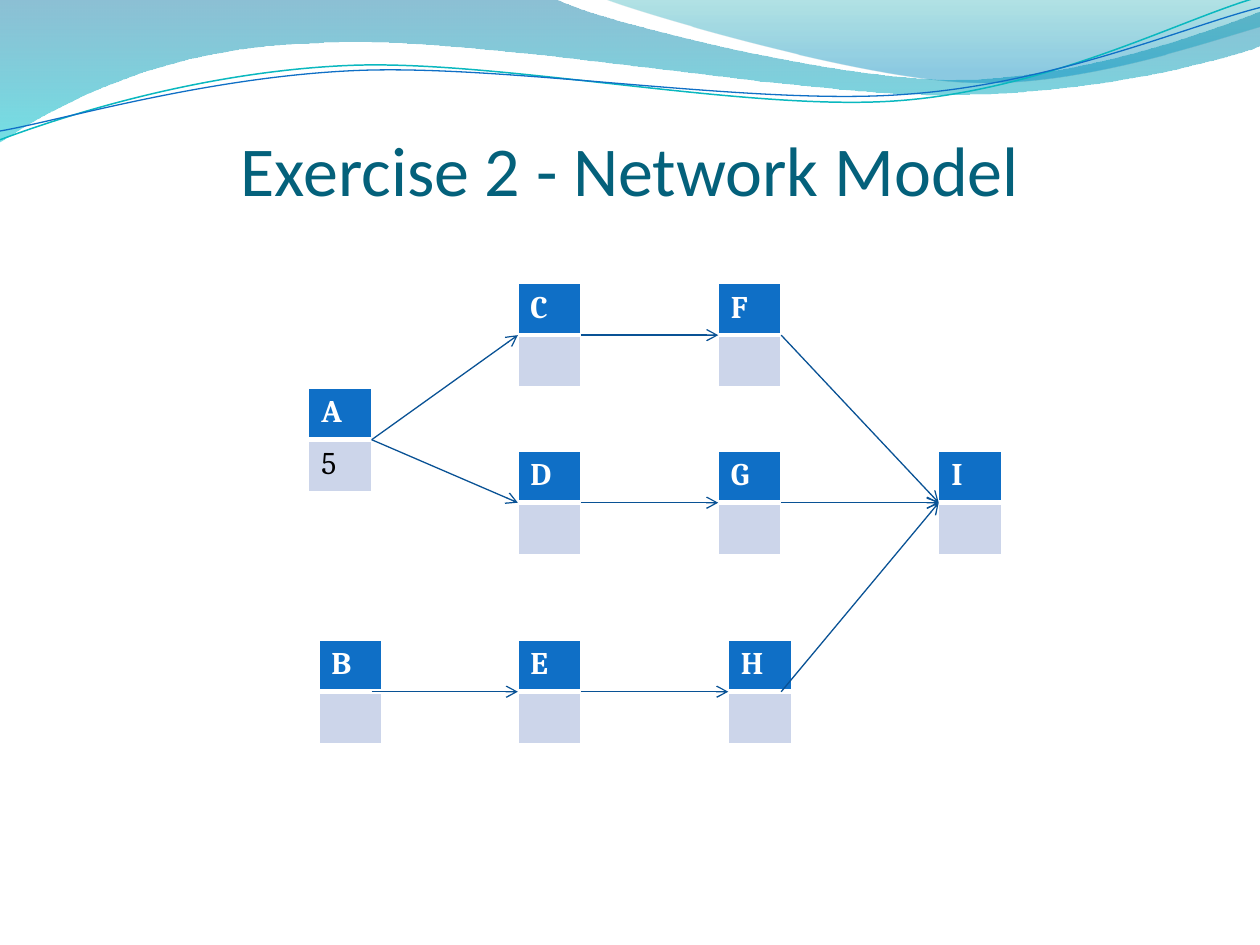
from dataclasses import dataclass
from typing import Optional

from lxml.etree import SubElement
from pptx import Presentation
from pptx.dml.color import RGBColor
from pptx.enum.shapes import MSO_CONNECTOR
from pptx.enum.text import MSO_ANCHOR, PP_ALIGN
from pptx.oxml.ns import qn
from pptx.util import Inches, Pt

WHITE = RGBColor(0xFF, 0xFF, 0xFF)
BLACK = RGBColor(0x00, 0x00, 0x00)
TITLE = RGBColor(0x04, 0x61, 0x7B)
BLUE = RGBColor(0x0F, 0x6F, 0xC6)
PALE = RGBColor(0xCC, 0xD5, 0xEA)
ARROW = RGBColor(0x09, 0x52, 0x95)
TEAL = RGBColor(0x0A, 0xB8, 0xBF)
WAVE_TOP = RGBColor(0x00, 0x74, 0xA1)
WAVE_END = RGBColor(0x00, 0xC6, 0xCF)
CREST_TOP = RGBColor(0x00, 0xA1, 0xA9)
CREST_END = RGBColor(0x00, 0x8B, 0xBF)

COLS = (2.45, 4.11, 5.7, 7.45)
ROWS = (2.25, 3.08, 3.58, 5.08)
NODE_W, CELL_H = 0.5, 0.41


@dataclass(frozen=True)
class Stop:
    position: float
    color: RGBColor
    alpha: int


@dataclass(frozen=True)
class Wave:
    start: tuple
    segments: tuple
    stops: tuple = ()
    color: Optional[RGBColor] = None
    width: float = 0


@dataclass(frozen=True)
class Node:
    name: str
    col: int
    row: int
    value: str = ""
    nudge: float = 0

    @property
    def left(self) -> float:
        return COLS[self.col] + self.nudge

    @property
    def middle(self) -> float:
        return ROWS[self.row] + CELL_H


WAVES = (
    Wave((0, 0), (
        ((4.4, -0.01),),
        ((4.76, 0.17), (6.64, 0.63), (7.58, 0.63)),
        ((8.53, 0.63), (9.58, 0.26), (10, 0.09)),
        ((10.01, 0.36),),
        ((9.83, 0.44), (8.7, 0.76), (7.46, 0.75)),
        ((6.22, 0.75), (3.82, 0.28), (2.57, 0.34)),
        ((1.29, 0.36), (0.46, 0.83), (-0.01, 1.13)),
    ), stops=(Stop(0, WAVE_TOP, 45), Stop(1, WAVE_END, 55))),
    Wave((4.79, -0.01), (
        ((5.09, 0.11), (6.82, 0.62), (7.69, 0.65)),
        ((8.56, 0.69), (9.61, 0.32), (10, 0.21)),
        ((10, 0),),
    ), stops=(Stop(0, CREST_TOP, 30), Stop(0.8, CREST_END, 45))),
    Wave((0, 1.11), (
        ((0.48, 0.93), (1.58, 0.57), (2.77, 0.52)),
        ((3.95, 0.47), (5.93, 0.89), (7.13, 0.8)),
        ((8.33, 0.71), (9.38, 0.15), (9.98, -0.02)),
    ), color=TEAL, width=0.85),
    Wave((0, 1.04), (
        ((0.47, 0.96), (1.64, 0.61), (2.83, 0.56)),
        ((4.03, 0.51), (5.97, 0.84), (7.17, 0.75)),
        ((8.36, 0.67), (9.41, 0.21), (10, 0.06)),
    ), color=BLUE, width=0.75),
)

NODES = (
    Node("A", 0, 1, "5"), Node("C", 1, 0), Node("D", 1, 2),
    Node("F", 2, 0), Node("G", 2, 2), Node("I", 3, 2),
    Node("B", 0, 3, nudge=0.08), Node("E", 1, 3), Node("H", 2, 3, nudge=0.08),
)
LINKS = ("AD", "BE", "AC", "CF", "DG", "EH", "GI", "FI", "HI")


def add_wave(s, wave: Wave) -> None:
    points = [(Inches(x), Inches(y)) for seg in wave.segments for x, y in seg]
    builder = s.shapes.build_freeform(Inches(wave.start[0]), Inches(wave.start[1]))
    builder.add_line_segments(points, close=bool(wave.stops))
    sp = builder.convert_to_shape()
    sp.shadow.inherit = False
    steps = iter(list(sp._element.iter(qn("a:lnTo"))))
    for seg in wave.segments:
        first = next(steps)
        if len(seg) == 3:
            first.tag = qn("a:cubicBezTo")
            for _ in range(2):
                step = next(steps)
                first.append(step[0])
                step.getparent().remove(step)
    if not wave.stops:
        sp.fill.background()
        sp.line.color.rgb = wave.color
        sp.line.width = Pt(wave.width)
        return
    sp.line.fill.background()
    sp.fill.gradient()
    sp.fill.gradient_angle = 270
    for target, stop in zip(sp.fill.gradient_stops, wave.stops):
        target.position = stop.position
        target.color.rgb = stop.color
    for gs, stop in zip(sp._element.iter(qn("a:gs")), wave.stops):
        SubElement(gs[0], qn("a:alpha"), val=str(stop.alpha * 1000))


def add_run(p, text: str, size: float, font: str, color: RGBColor, bold: bool = False) -> None:
    r = p.add_run()
    r.text = text
    r.font.size = Pt(size)
    r.font.name = font
    r.font.bold = bold
    r.font.color.rgb = color


def add_title(s, text: str) -> None:
    tf = s.shapes.add_textbox(Inches(0.5), Inches(0.77), Inches(9), Inches(0.9)).text_frame
    tf.word_wrap = True
    tf.vertical_anchor = MSO_ANCHOR.BOTTOM
    tf.margin_left = tf.margin_right = tf.margin_bottom = 0
    tf.margin_top = Inches(0.05)
    p = tf.paragraphs[0]
    p.alignment = PP_ALIGN.CENTER
    add_run(p, text, 40, "Calibri", TITLE)


def set_borders(cell, top: float, bottom: float) -> None:
    tcPr = cell._tc.get_or_add_tcPr()
    for side, width in (("L", 1), ("R", 1), ("T", top), ("B", bottom)):
        ln = SubElement(tcPr, qn(f"a:ln{side}"), w=str(Pt(width)))
        fill = SubElement(ln, qn("a:solidFill"))
        SubElement(fill, qn("a:srgbClr"), val=str(WHITE))


def add_node(s, node: Node) -> None:
    table = s.shapes.add_table(2, 1, Inches(node.left), Inches(ROWS[node.row]),
                               Inches(NODE_W), Inches(2 * CELL_H)).table
    table.first_row = table.horz_banding = False
    looks = ((node.name, BLUE, WHITE, True, 1, 3), (node.value, PALE, BLACK, False, 3, 1))
    for i, (text, fill, color, bold, top, bottom) in enumerate(looks):
        cell = table.cell(i, 0)
        set_borders(cell, top, bottom)
        cell.fill.solid()
        cell.fill.fore_color.rgb = fill
        if text:
            add_run(cell.text_frame.paragraphs[0], text, 18, "Cambria", color, bold)


def add_link(s, start: Node, end: Node) -> None:
    line = s.shapes.add_connector(
        MSO_CONNECTOR.STRAIGHT, Inches(COLS[start.col] + NODE_W), Inches(start.middle),
        Inches(end.left), Inches(end.middle))
    line.line.color.rgb = ARROW
    line.line.width = Pt(0.75)
    SubElement(line.line._get_or_add_ln(), qn("a:tailEnd"), type="arrow")
    SubElement(line._element.spPr, qn("a:effectLst"))


def main() -> None:
    prs = Presentation()
    prs.slide_width, prs.slide_height = Inches(10), Inches(7.5)
    s = prs.slides.add_slide(prs.slide_layouts[6])
    for wave in WAVES:
        add_wave(s, wave)
    add_title(s, "Exercise 2 - Network Model")
    for node in NODES:
        add_node(s, node)
    by_name = {node.name: node for node in NODES}
    for start, end in LINKS:
        add_link(s, by_name[start], by_name[end])
    prs.save("out.pptx")


if __name__ == "__main__":
    main()
